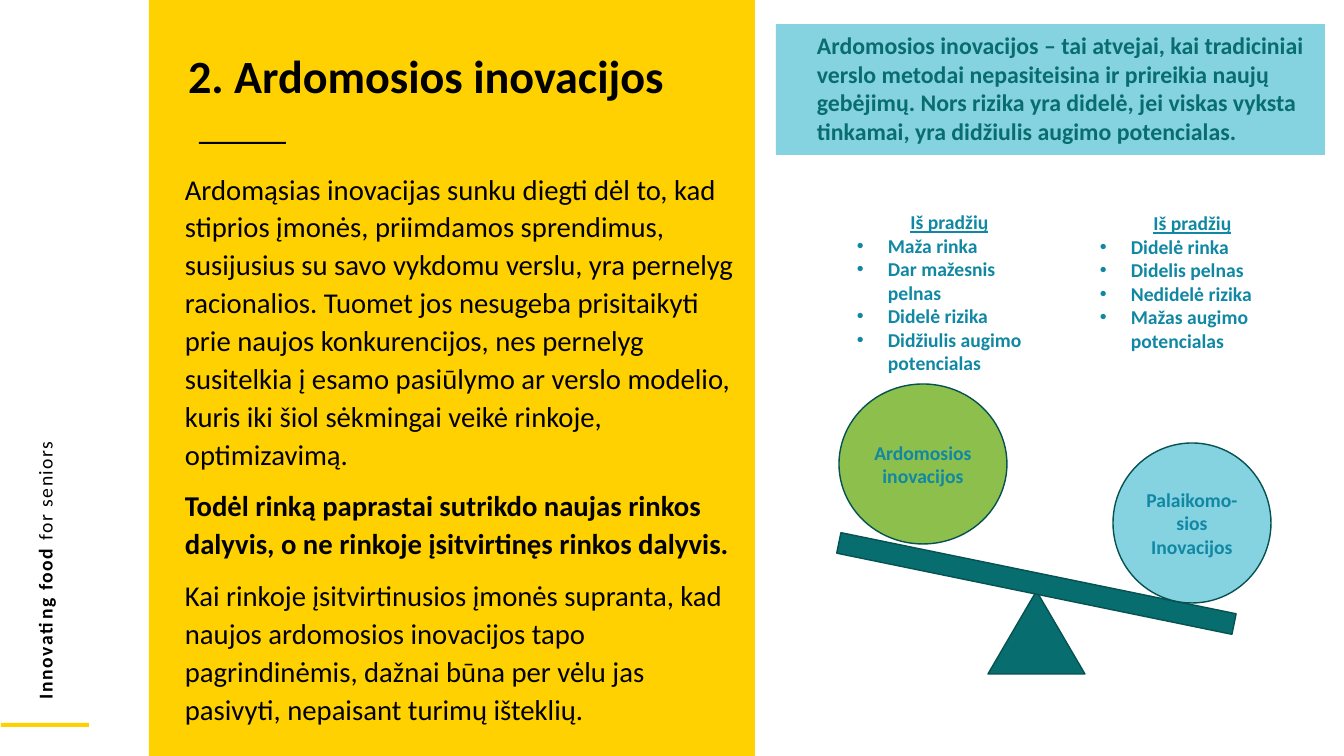
from lxml.etree import SubElement
from pptx import Presentation
from pptx.dml.color import RGBColor
from pptx.enum.shapes import MSO_SHAPE as SHAPE
from pptx.enum.text import MSO_ANCHOR as ANCHOR, MSO_AUTO_SIZE as AUTO, PP_ALIGN as ALIGN
from pptx.oxml.ns import qn
from pptx.util import Pt

SCALE = 914400 / 100.8  # EMU in one px
W, H = 1344, 756
BLACK = RGBColor(0x00, 0x00, 0x00)
YELLOW = RGBColor(0xFF, 0xD1, 0x00)
SKY = RGBColor(0x85, 0xD2, 0xE1)
GREEN = RGBColor(0x8C, 0xBF, 0x4B)
TEAL = RGBColor(0x08, 0x6D, 0x6E)
DARK_TEAL = RGBColor(0x06, 0x51, 0x51)
BLUE = RGBColor(0x11, 0x88, 0xA3)
LABEL = {"size": Pt(14), "bold": True}

TITLE = "2. Ardomosios inovacijos"
BODY = [
    ("Ardomąsias inovacijas sunku diegti dėl to, kad stiprios įmonės, priimdamos "
     "sprendimus, susijusius su savo vykdomu verslu, yra pernelyg racionalios. Tuomet jos "
     "nesugeba prisitaikyti prie naujos konkurencijos, nes pernelyg susitelkia į esamo "
     "pasiūlymo ar verslo modelio, kuris iki šiol sėkmingai veikė rinkoje, optimizavimą.", False),
    ("Todėl rinką paprastai sutrikdo naujas rinkos dalyvis, o ne rinkoje įsitvirtinęs "
     "rinkos dalyvis.", True),
    ("Kai rinkoje įsitvirtinusios įmonės supranta, kad naujos ardomosios inovacijos tapo "
     "pagrindinėmis, dažnai būna per vėlu jas pasivyti, nepaisant turimų išteklių.", False),
]
DEFINITION = ("Ardomosios inovacijos – tai atvejai, kai tradiciniai verslo metodai "
              "nepasiteisina ir prireikia naujų gebėjimų. Nors rizika yra didelė, jei viskas "
              "vyksta tinkamai, yra didžiulis augimo potencialas.")
DISRUPTIVE = ["Maža rinka", "Dar mažesnis pelnas", "Didelė rizika", "Didžiulis augimo potencialas"]
SUSTAINING = ["Didelė rinka", "Didelis pelnas", "Nedidelė rizika", "Mažas augimo potencialas"]


def px(*lengths):
    return [round(n * SCALE) for n in lengths]


def add_shape(s, kind, box, fill, line=None):
    sp = s.shapes.add_shape(kind, *px(*box))
    sp.shadow.inherit = False
    sp.fill.solid()
    sp.fill.fore_color.rgb = fill
    if line is None:
        sp.line.fill.background()
    else:
        sp.line.color.rgb = line
        sp.line.width = Pt(1)
    return sp


def add_text_box(s, box):
    sp = s.shapes.add_textbox(*px(*box))
    sp.text_frame.word_wrap = True
    return sp


def add_run(p, text, color, **font):
    r = p.add_run()
    r.text = text
    r.font.color.rgb = color
    for name, value in {"name": "Calibri", **font}.items():
        setattr(r.font, name, value)
    return r


def paragraph(tf, index, **layout):
    p = tf.add_paragraph() if index else tf.paragraphs[0]
    for name, value in layout.items():
        setattr(p, name, value)
    return p


def set_indent(p, left, first=0):
    pPr = p._p.get_or_add_pPr()
    pPr.set("marL", str(px(left)[0]))
    pPr.set("indent", str(px(first)[0]))
    return pPr


def side_strip(s, x, y):
    add_shape(s, SHAPE.RECTANGLE, (x + 1, y + 723, 88, 4), YELLOW)
    sp = add_text_box(s, (x - 335, y + 312, 760, 34))
    sp.rotation = 270
    p = sp.text_frame.paragraphs[0]
    for text, bold in (("Innovating food ", True), ("for seniors", False)):
        r = add_run(p, text, BLACK, size=Pt(14), bold=bold)
        r._r.get_or_add_rPr().set("spc", "110")


def yellow_panel(s, x, y, w, h):
    add_shape(s, SHAPE.RECTANGLE, (x, y, w, h), YELLOW)
    add_shape(s, SHAPE.RECTANGLE, (x + 50, y + 142, 87, 2), BLACK)

    # Title
    title = s.shapes.title
    title.left, title.top, title.width, title.height = px(x + 29, y + 49, 520, 65)
    tf = title.text_frame
    tf.auto_size, tf.vertical_anchor = AUTO.NONE, ANCHOR.TOP
    p = paragraph(tf, 0, alignment=ALIGN.LEFT, line_spacing=0.9)
    add_run(p, TITLE, BLACK, size=Pt(33), bold=True)

    # Body text
    tf = add_text_box(s, (x + 18, y + 163, 579, 559)).text_frame
    for i, (text, bold) in enumerate(BODY):
        p = paragraph(tf, i, line_spacing=1.1, space_before=Pt(10 if i else 0))
        set_indent(p, 8)
        add_run(p, text, BLACK, size=Pt(20.5), bold=bold)


def definition_banner(s, x, y, w, h):
    add_shape(s, SHAPE.RECTANGLE, (x, y, w, h), SKY)
    tf = add_text_box(s, (x + 31, y + 2, 525, 127)).text_frame
    add_run(tf.paragraphs[0], DEFINITION, TEAL, size=Pt(17), bold=True)


def feature_list(s, box, items):
    tf = add_text_box(s, box).text_frame
    p = paragraph(tf, 0, alignment=ALIGN.CENTER)
    add_run(p, "Iš pradžių", BLUE, underline=True, **LABEL)
    for i, item in enumerate(items, 1):
        p = paragraph(tf, i)
        pPr = set_indent(p, 31, -31)
        SubElement(pPr, qn("a:buFont")).set("typeface", "Arial")
        SubElement(pPr, qn("a:buChar")).set("char", "•")
        add_run(p, item, BLUE, **LABEL)


def ball(s, box, fill, lines):
    sp = add_shape(s, SHAPE.FLOWCHART_CONNECTOR, box, fill, DARK_TEAL)
    tf = sp.text_frame
    tf.word_wrap, tf.vertical_anchor = True, ANCHOR.MIDDLE
    for i, text in enumerate(lines):
        add_run(paragraph(tf, i, alignment=ALIGN.CENTER), text, BLUE, **LABEL)


def seesaw(s, x, y):
    # Support and tilted beam
    add_shape(s, SHAPE.ISOSCELES_TRIANGLE, (x + 226, y + 386, 97, 83), TEAL, DARK_TEAL)
    beam = add_shape(s, SHAPE.MATH_MINUS, (x, y + 334, 549, 89), TEAL, DARK_TEAL)
    beam.rotation = 11.6

    # Weights and their features
    ball(s, (x + 77, y + 179, 168, 160), GREEN, ["Ardomosios", "inovacijos"])
    ball(s, (x + 351, y + 238, 158, 160), SKY, ["Palaikomo-sios", "Inovacijos"])
    feature_list(s, (x + 85, y, 205, 176), DISRUPTIVE)
    feature_list(s, (x + 328, y + 1, 205, 152), SUSTAINING)


def main():
    prs = Presentation()
    prs.slide_width, prs.slide_height = px(W, H)
    s = prs.slides.add_slide(prs.slide_layouts[5])
    side_strip(s, 0, 0)
    yellow_panel(s, 149, 0, 606, H)
    definition_banner(s, 776, 24, 549, 131)
    seesaw(s, 762, 205)

    # Bring the title in front of the panel
    title = s.shapes.title._element
    title.getparent().append(title)
    prs.save("out.pptx")


if __name__ == "__main__":
    main()
